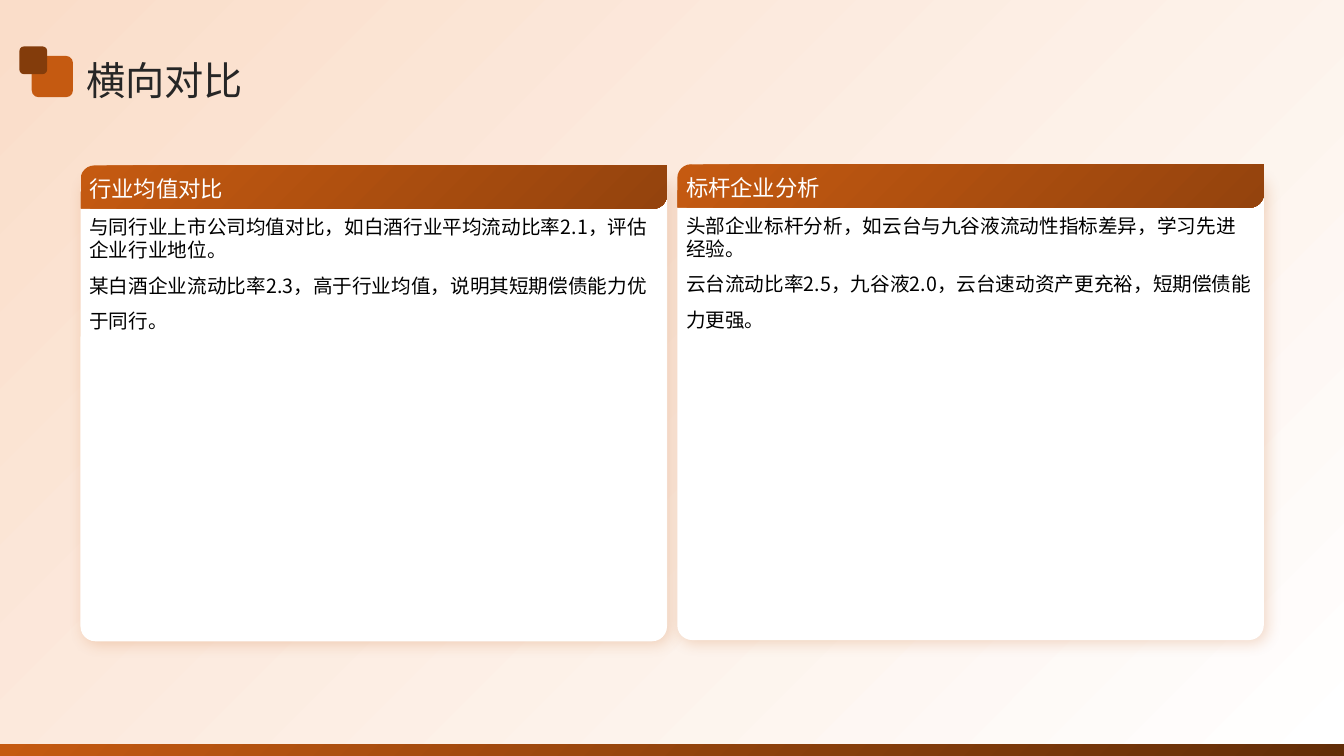
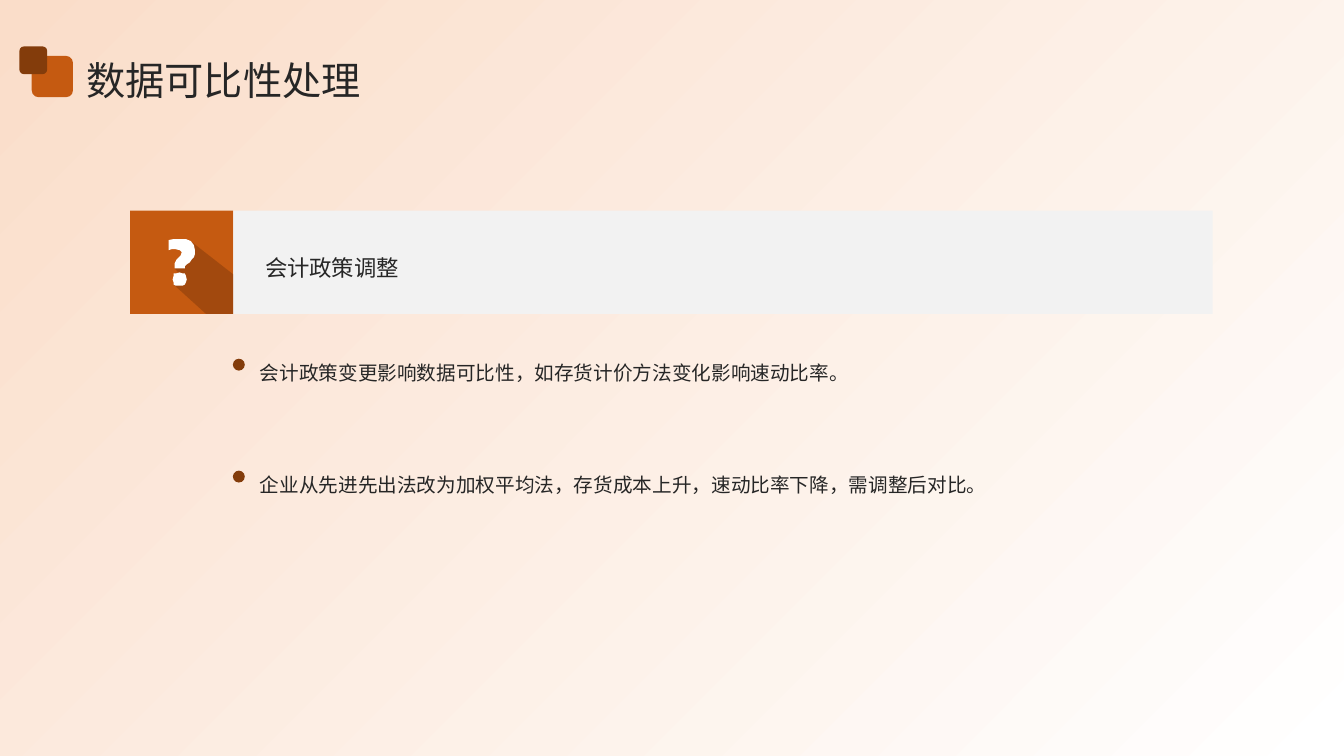
from dataclasses import dataclass

import pptx
import pptx.dml.color
import pptx.enum.shapes
import pptx.enum.text
import pptx.oxml
import pptx.oxml.ns
import pptx.util

Cm = pptx.util.Cm
Pt = pptx.util.Pt
Preset = pptx.enum.shapes.MSO_SHAPE
Anchor = pptx.enum.text.MSO_ANCHOR


@dataclass(frozen=True)
class Theme:
    font: str = "Noto Sans CJK SC"
    white: str = "FFFFFF"
    ink: str = "262626"
    black: str = "000000"
    peach: str = "FADDC9"
    orange: str = "C55A11"
    rust: str = "94430D"
    brown: str = "833C0B"
    dark_brown: str = "622D08"
    band: str = "F2F2F2"
    title_size: int = 28
    heading_size: int = 16
    body_size: int = 14


@dataclass(frozen=True)
class Box:
    """A rectangle in centimetres."""
    left: float
    top: float
    width: float
    height: float

    def emu(self) -> tuple:
        return Cm(self.left), Cm(self.top), Cm(self.width), Cm(self.height)


@dataclass(frozen=True)
class Gradient:
    """A two-colour gradient; the angle runs clockwise from the right."""
    start: str
    end: str
    angle: int = 45


@dataclass(frozen=True)
class Line:
    text: str
    size: int
    color: str
    spacing: float = 1.0


@dataclass(frozen=True)
class Card:
    left: float
    top: float
    heading: str
    finding: str
    example: str


THEME = Theme()
SLIDE = Box(0, 0, 33.87, 19.05)
CARD_WIDTH = 14.78
CARD_INSET = 0.22
TILE = Box(3.28, 5.31, 2.6, 2.6)
BAND_WIDTH = 24.68
BULLET_TOP = 8.81
BULLET_STEP = 2.82

CARDS = [
    Card(2.03, 4.17, "行业均值对比",
         "与同行业上市公司均值对比，如白酒行业平均流动比率2.1，评估企业行业地位。",
         "某白酒企业流动比率2.3，高于行业均值，说明其短期偿债能力优于同行。"),
    Card(17.07, 4.14, "标杆企业分析",
         "头部企业标杆分析，如云台与九谷液流动性指标差异，学习先进经验。",
         "云台流动比率2.5，九谷液2.0，云台速动资产更充裕，短期偿债能力更强。"),
]
BULLETS = [
    "会计政策变更影响数据可比性，如存货计价方法变化影响速动比率。",
    "企业从先进先出法改为加权平均法，存货成本上升，速动比率下降，需调整后对比。",
]

# Outlines of the question icon on a grid of 102 units across its tile.
TILE_UNITS = 102
LONG_SHADOW = [(61, 31), (44, 57), (52, 66), (43, 73), (75, 102), (102, 102), (102, 63)]
HOOK = [(44, 55), (44, 52), (45, 50), (46, 48), (48, 46), (50, 44), (51, 41), (49, 39),
        (45, 38), (41, 38), (38, 39), (38, 29), (43, 28), (48, 28), (55, 28), (60, 30),
        (63, 34), (64, 39), (64, 43), (63, 46), (61, 48), (59, 51), (56, 53), (55, 54),
        (54, 55), (54, 57), (44, 57)]
POINT = [(49, 74), (45, 74), (43, 73), (43, 71), (42, 68), (43, 64), (43, 62), (45, 62),
         (49, 61), (52, 62), (54, 62), (55, 64), (56, 68), (55, 71), (54, 73), (52, 74)]


def paint(shape, fill: str | Gradient) -> None:
    """Fill a shape and take away its line and shadow."""
    shape.shadow.inherit = False
    shape.line.fill.background()
    if isinstance(fill, Gradient):
        shape.fill.gradient()
        shape.fill.gradient_angle = (360 - fill.angle) % 360
        for stop, color in zip(shape.fill.gradient_stops, (fill.start, fill.end)):
            stop.color.rgb = pptx.dml.color.RGBColor.from_string(color)
    else:
        shape.fill.solid()
        shape.fill.fore_color.rgb = pptx.dml.color.RGBColor.from_string(fill)


def add_block(shapes, box: Box, fill: str | Gradient, preset=Preset.RECTANGLE,
              adjustments: tuple = ()):
    block = shapes.add_shape(preset, *box.emu())
    for index, value in enumerate(adjustments):
        block.adjustments[index] = value
    paint(block, fill)
    return block


def add_outline(shapes, contours: list, fill: str):
    """Draw closed contours given in tile units."""
    scale = Cm(TILE.width) / TILE_UNITS
    builder = shapes.build_freeform(*contours[0][0], scale=scale)
    for index, contour in enumerate(contours):
        if index:
            builder.move_to(*contour[0])
        builder.add_line_segments(contour[1:], close=True)
    outline = builder.convert_to_shape(Cm(TILE.left), Cm(TILE.top))
    paint(outline, fill)
    return outline


def add_soft_shadow(shape, color: str) -> None:
    effects = shape._element.spPr.find(pptx.oxml.ns.qn("a:effectLst"))
    effects.append(pptx.oxml.parse_xml(
        f'<a:outerShdw {pptx.oxml.ns.nsdecls("a")} blurRad="{Pt(11)}" dist="{Pt(3)}" '
        f'dir="2700000" algn="tl" rotWithShape="0"><a:srgbClr val="{color}">'
        '<a:alpha val="21000"/></a:srgbClr></a:outerShdw>'))


def set_alpha(shape, percent: int) -> None:
    color = shape._element.spPr.find(".//" + pptx.oxml.ns.qn("a:srgbClr"))
    color.append(pptx.oxml.parse_xml(
        f'<a:alpha {pptx.oxml.ns.nsdecls("a")} val="{percent * 1000}"/>'))


def add_text(shapes, box: Box, lines: list[Line], anchor=Anchor.TOP) -> None:
    frame = shapes.add_textbox(*box.emu()).text_frame
    frame.word_wrap = True
    frame.vertical_anchor = anchor
    frame.margin_left = frame.margin_right = frame.margin_top = frame.margin_bottom = 0
    for index, line in enumerate(lines):
        paragraph = frame.add_paragraph() if index else frame.paragraphs[0]
        paragraph.text = line.text
        paragraph.line_spacing = line.spacing
        font = paragraph.font
        font.name = THEME.font
        font.size = Pt(line.size)
        font.color.rgb = pptx.dml.color.RGBColor.from_string(line.color)
        font._element.append(pptx.oxml.parse_xml(
            f'<a:ea {pptx.oxml.ns.nsdecls("a")} typeface="{THEME.font}"/>'))


def add_slide(deck):
    """Add a blank slide with the shared background."""
    slide = deck.slides.add_slide(deck.slide_layouts[6])
    add_block(slide.shapes, SLIDE, Gradient(THEME.white, THEME.peach, 225))
    return slide


def add_title(slide, title: str) -> None:
    add_text(slide.shapes, Box(2.18, 1.3, 29.64, 1.3),
             [Line(title, THEME.title_size, THEME.ink, 1.1)], Anchor.MIDDLE)
    marker = slide.shapes.add_group_shape().shapes
    add_block(marker, Box(0.8, 1.41, 1.04, 1.04), THEME.orange, Preset.ROUNDED_RECTANGLE)
    add_block(marker, Box(0.49, 1.17, 0.7, 0.7), THEME.brown, Preset.ROUNDED_RECTANGLE)


def add_card(slide, card: Card) -> None:
    shapes = slide.shapes
    text_left, text_width = card.left + CARD_INSET, CARD_WIDTH - 2 * CARD_INSET
    panel = add_block(shapes, Box(card.left, card.top + 0.28, CARD_WIDTH, 11.71),
                      THEME.white, Preset.ROUNDED_RECTANGLE, (0.032,))
    add_soft_shadow(panel, THEME.orange)
    add_block(shapes, Box(card.left, card.top, CARD_WIDTH, 1.09),
              Gradient(THEME.orange, THEME.rust),
              Preset.ROUND_2_DIAG_RECTANGLE, (0.319, 0))
    add_text(shapes, Box(text_left, card.top + 0.13, text_width, 0.89),
             [Line(card.heading, THEME.heading_size, THEME.white)], Anchor.MIDDLE)
    add_text(shapes, Box(text_left, card.top + 1.24, text_width, 10.34),
             [Line(card.finding, THEME.body_size, THEME.black),
              Line(card.example, THEME.body_size, THEME.black, 1.5)])


def add_question_icon(slide) -> None:
    icon = slide.shapes.add_group_shape().shapes
    add_block(icon, TILE, THEME.orange)
    set_alpha(add_outline(icon, [LONG_SHADOW], THEME.rust), 70)
    add_outline(icon, [HOOK, POINT], THEME.white)


def add_bullet(slide, top: float, text: str) -> None:
    add_block(slide.shapes, Box(5.87, top + 0.23, 0.3, 0.3), THEME.brown, Preset.OVAL)
    add_text(slide.shapes, Box(6.55, top, 24, 2.66),
             [Line(text, THEME.body_size, THEME.ink, 1.5)])


def build_comparison(deck) -> None:
    slide = add_slide(deck)
    add_block(slide.shapes, Box(0, SLIDE.height - 0.3, SLIDE.width, 0.3),
              Gradient(THEME.orange, THEME.dark_brown))
    for card in CARDS:
        add_card(slide, card)
    add_title(slide, "横向对比")


def build_comparability(deck) -> None:
    slide = add_slide(deck)
    band_left = TILE.left + TILE.width
    add_question_icon(slide)
    add_block(slide.shapes, Box(band_left, TILE.top, BAND_WIDTH, TILE.height), THEME.band)
    add_text(slide.shapes, Box(band_left + 0.8, TILE.top + 0.18, 23.32, 2.24),
             [Line("会计政策调整", THEME.heading_size, THEME.ink, 1.4)], Anchor.MIDDLE)
    for index, text in enumerate(BULLETS):
        add_bullet(slide, BULLET_TOP + index * BULLET_STEP, text)
    add_title(slide, "数据可比性处理")


def main() -> None:
    deck = pptx.Presentation()
    deck.slide_width, deck.slide_height = Cm(SLIDE.width), Cm(SLIDE.height)
    build_comparison(deck)
    build_comparability(deck)
    deck.save("out.pptx")


if __name__ == "__main__":
    main()
